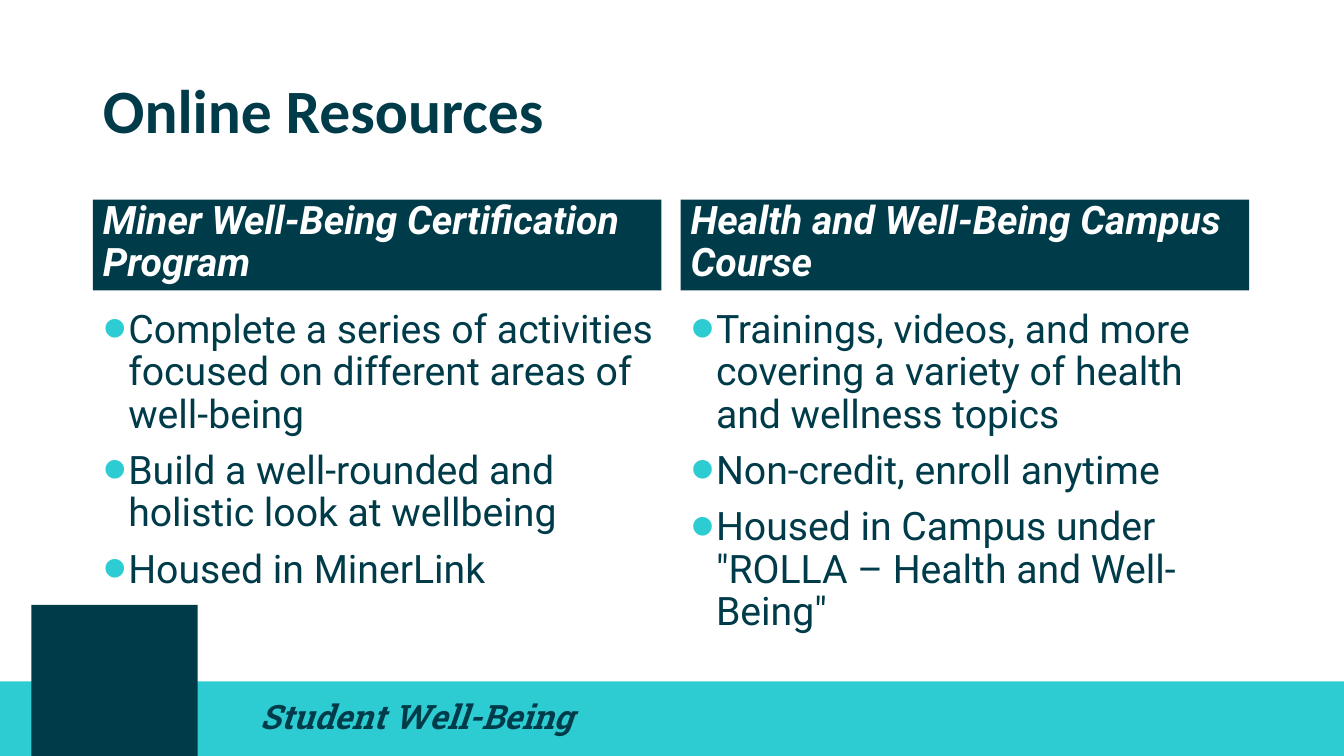
"""Build the Online Resources slide with two columns and a footer band."""
from dataclasses import dataclass

from lxml import etree
from pptx import Presentation
from pptx.dml.color import RGBColor
from pptx.enum.shapes import MSO_SHAPE
from pptx.enum.text import MSO_ANCHOR, MSO_AUTO_SIZE, PP_ALIGN
from pptx.oxml.ns import qn
from pptx.util import Cm, Pt

RECT = MSO_SHAPE.RECTANGLE
TOP, MIDDLE, BOTTOM = MSO_ANCHOR.TOP, MSO_ANCHOR.MIDDLE, MSO_ANCHOR.BOTTOM
LEFT = PP_ALIGN.LEFT
FIXED = MSO_AUTO_SIZE.NONE


@dataclass(frozen=True)
class Theme:
    """Colours, fonts and type sizes."""
    dark: str = "003B49"
    aqua: str = "2DCCD3"
    white: str = "FFFFFF"
    head: str = "Calibri"
    body: str = "Roboto"
    slab: str = "Roboto Slab"
    large: int = 44
    main: int = 28
    small: int = 24


THEME = Theme()
WIDE, HIGH = 33.87, 19.05
EDGE = 2.34
STEP = 14.81

COLUMNS = [
    ("Miner Well-Being Certification Program", [
        "Complete a series of activities focused on different areas of well-being",
        "Build a well-rounded and holistic look at wellbeing",
        "Housed in MinerLink",
    ]),
    ("Health and Well-Being Campus Course", [
        "Trainings, videos, and more covering a variety of health and wellness topics",
        "Non-credit, enroll anytime",
        "Housed in Campus under \"ROLLA – Health and Well-Being\"",
    ]),
]


def place(shape, left, top, width, height):
    """Set a shape's box in centimetres."""
    shape.left, shape.top = Cm(left), Cm(top)
    shape.width, shape.height = Cm(width), Cm(height)


def paint(shape, color):
    """Fill a shape with one colour."""
    shape.fill.solid()
    shape.fill.fore_color.rgb = RGBColor.from_string(color)


def bullet(para):
    """Give a paragraph a large aqua bullet with a hanging indent."""
    props = para._p.get_or_add_pPr()
    props.set("marL", str(Cm(0.64)))
    props.set("indent", str(-Cm(0.64)))
    tint = etree.SubElement(props, qn("a:buClr"))
    etree.SubElement(tint, qn("a:srgbClr"), val=THEME.aqua)
    etree.SubElement(props, qn("a:buSzPct"), val="175000")
    etree.SubElement(props, qn("a:buFont"), typeface="Arial")
    etree.SubElement(props, qn("a:buChar"), char="•")


def write(shape, *lines, font=THEME.body, size=THEME.main, color=THEME.dark,
          bold=False, italic=False, anchor=TOP, dots=False):
    """Write one paragraph per line in the given format."""
    frame = shape.text_frame
    frame.word_wrap = True
    frame.auto_size = FIXED
    frame.vertical_anchor = anchor
    for i, line in enumerate(lines):
        para = frame.add_paragraph() if i else frame.paragraphs[0]
        if dots:
            bullet(para)
        para.alignment = LEFT
        para.line_spacing = 0.9
        para.space_before = Pt(10 if i else 0)
        run = para.add_run()
        run.text = line
        run.font.name, run.font.size = font, Pt(size)
        run.font.bold, run.font.italic = bold, italic
        run.font.color.rgb = RGBColor.from_string(color)


def block(slide, color, *box):
    """Add a plain rectangle."""
    shape = slide.shapes.add_shape(RECT, *map(Cm, box))
    shape.shadow.inherit = False
    shape.line.fill.background()
    paint(shape, color)
    return shape


def footer(slide):
    """Add the footer band, its label and square behind the content."""
    band = block(slide, THEME.aqua, 0, 17.17, WIDE, 1.88)
    label = slide.shapes.add_textbox(*map(Cm, (6.3, 17.3, 25.4, 1.63)))
    write(label, "Student Well-Being", font=THEME.slab, size=THEME.small,
          bold=True, italic=True, anchor=MIDDLE)
    square = block(slide, THEME.dark, 0.79, 15.24, 4.19, 3.81)
    for i, shape in enumerate((band, label, square)):
        slide.shapes._spTree.insert(2 + i, shape._element)


def column(head, body, left, title, items):
    """Fill one header and the list under it."""
    place(head, left, 5.03, 14.33, 2.29)
    paint(head, THEME.dark)
    write(head, title, color=THEME.white, bold=True, italic=True, anchor=BOTTOM)
    place(body, left, 7.67, 14.4, 9.3)
    write(body, *items, dots=True)


def main():
    """Build and save the slide."""
    deck = Presentation()
    deck.slide_width, deck.slide_height = Cm(WIDE), Cm(HIGH)
    slide = deck.slides.add_slide(deck.slide_layouts[4])
    title = slide.shapes.title
    place(title, EDGE, 1.02, 29.21, 3.68)
    write(title, "Online Resources", font=THEME.head, size=THEME.large,
          bold=True, anchor=MIDDLE)
    slots = slide.placeholders
    for i, (name, items) in enumerate(COLUMNS):
        column(slots[2 * i + 1], slots[2 * i + 2], EDGE + i * STEP, name, items)
    footer(slide)
    deck.save("out.pptx")


if __name__ == "__main__":
    main()
